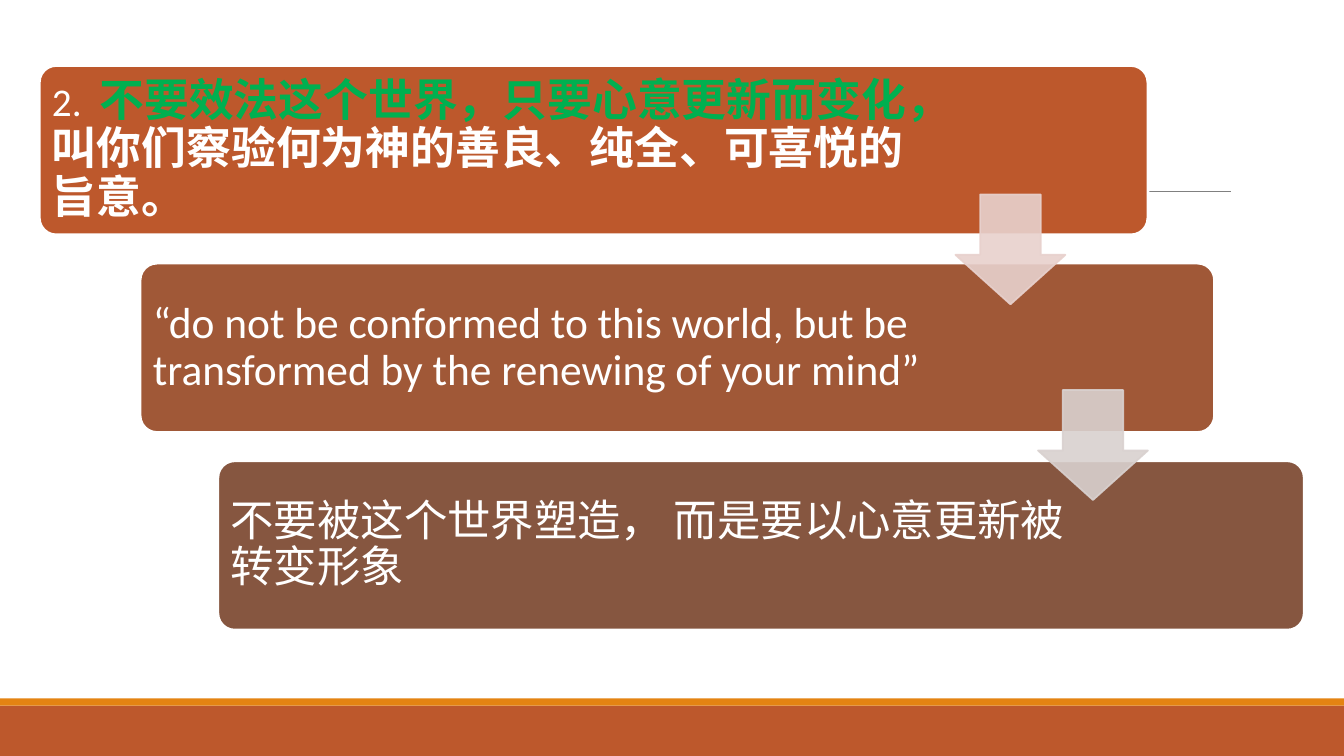
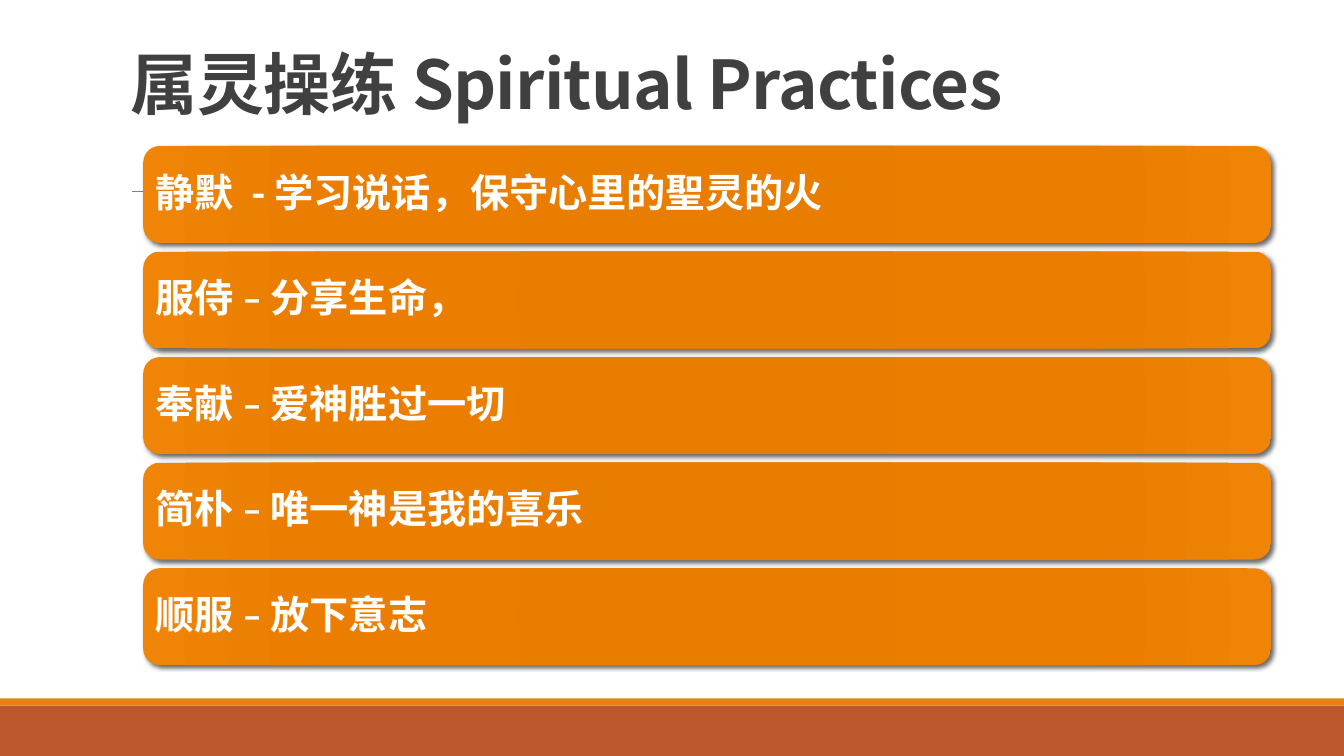
"""Build two slides: a cascade of verse cards and a list of spiritual practices."""
from lxml import etree
from pptx import Presentation
from pptx import util as u
from pptx.dml.color import RGBColor
from pptx.enum import shapes, text
from pptx.oxml import ns

SLIDE_WIDTH, SLIDE_HEIGHT = 33.87, 19.05
RUST, AMBER, WHITE, GREEN = "BD582C", "E48312", "FFFFFF", "00B050"
GREY, CHARCOAL, BLACK = "808080", "404040", "000000"
LATIN, CHINESE = "Calibri", "Noto Sans CJK SC"
GRADIENT = [(0, "E57B00"), (34, "E87D00"), (70, "EB7E00"), (100, "EF8407")]

TITLE = {"size": u.Pt(48), "name": CHINESE, "bold": True, "color": CHARCOAL}
NUMBER = {"size": u.Pt(28), "name": LATIN, "color": WHITE}
VERSE = {"size": u.Pt(32), "name": LATIN, "bold": True, "color": WHITE}
KEY_VERSE = {**VERSE, "name": CHINESE, "color": GREEN}
PLAIN_VERSE = {"size": u.Pt(31), "name": LATIN, "color": WHITE}
PRACTICE = {"size": u.Pt(28), "name": CHINESE, "bold": True, "color": WHITE}

CARDS = [
    (0.99, 27.94, 22.81, RUST, [
        ("2.  ", NUMBER),
        ("不要效法这个世界，只要心意更新而变化，", KEY_VERSE),
        ("叫你们察验何为神的善良、纯全、可喜悦的旨意。", VERSE)]),
    (3.53, 27.08, 21.54, "A05837", [
        ("“do not be conformed to this world, but be transformed "
         "by the renewing of your mind”", PLAIN_VERSE)]),
    (5.49, 27.38, 21.77, "865640", [
        ("不要被这个世界塑造， 而是要以心意更新被转变形象", PLAIN_VERSE)]),
]
ARROWS = [(24.08, "E8D1CD"), (26.16, "D9D1CF")]
PRACTICES = [
    "静默  - 学习说话，保守心里的聖灵的火",
    "服侍 – 分享生命，",
    "奉献 – 爱神胜过一切",
    "简朴 – 唯一神是我的喜乐",
    "顺服 – 放下意志",
]


def rgb(color):
    """Turn a hex string into a colour."""
    return RGBColor.from_string(color)


def add_child(parent, tag, **attributes):
    """Append a drawing element with the given attributes."""
    child = etree.SubElement(parent, ns.qn(tag))
    for name, value in attributes.items():
        child.set(name, str(value))
    return child


def add_color(parent, color, opacity=100):
    """Append a colour with an opacity in percent."""
    element = add_child(parent, "a:srgbClr", val=color)
    if opacity < 100:
        add_child(element, "a:alpha", val=opacity * 1000)


def set_opacity(fill, opacity):
    """Give a solid fill an opacity in percent."""
    element = fill._xPr.find(ns.qn("a:solidFill"))
    add_child(element[0], "a:alpha", val=opacity * 1000)


def write_runs(frame, runs, line_spacing, **frame_format):
    """Fill a text frame with one left-aligned paragraph of formatted runs."""
    for name, value in {"word_wrap": True, **frame_format}.items():
        setattr(frame, name, value)
    paragraph = frame.paragraphs[0]
    paragraph.alignment = text.PP_ALIGN.LEFT
    paragraph.line_spacing = line_spacing
    for words, run_format in runs:
        run = paragraph.add_run()
        run.text = words
        for name, value in run_format.items():
            if name == "color":
                run.font.color.rgb = rgb(value)
            else:
                setattr(run.font, name, value)
        add_child(run.font._element, "a:ea", typeface=LATIN)
    return paragraph


def add_block(slide, kind, box, color=None, line=None, line_width=0, adjustments=()):
    """Add a preset shape without shadow; box is left, top, width, height in cm."""
    shape = slide.shapes.add_shape(kind, *map(u.Cm, box))
    shape.shadow.inherit = False
    for index, value in enumerate(adjustments):
        shape.adjustments[index] = value
    if color:
        shape.fill.solid()
        shape.fill.fore_color.rgb = rgb(color)
    if line:
        shape.line.color.rgb = rgb(line)
        shape.line.width = u.Pt(line_width)
    else:
        shape.line.fill.background()
    return shape


def add_card(slide, box, text_width, margin, runs, corner, **block_format):
    """Add a rounded card whose text keeps to a given width."""
    left, top, width, height = box
    card = add_block(slide, shapes.MSO_SHAPE.ROUNDED_RECTANGLE, box,
                     adjustments=[corner], **block_format)
    side = margin - 0.29 * corner * height
    write_runs(card.text_frame, runs, 0.9,
               vertical_anchor=text.MSO_ANCHOR.MIDDLE,
               margin_left=u.Cm(side), margin_right=u.Cm(side + width - text_width),
               margin_top=u.Cm(side), margin_bottom=u.Cm(side))
    return card


def add_glow(card):
    """Give a card the radial orange gradient and a soft shadow."""
    properties = card._element.spPr
    gradient = etree.Element(ns.qn("a:gradFill"), rotWithShape="1")
    stops = add_child(gradient, "a:gsLst")
    for position, color in GRADIENT:
        add_color(add_child(stops, "a:gs", pos=position * 1000), color)
    circle = add_child(gradient, "a:path", path="circle")
    add_child(circle, "a:fillToRect", **dict.fromkeys("ltrb", 100000))
    properties.find(ns.qn("a:prstGeom")).addnext(gradient)
    shadow = add_child(properties.find(ns.qn("a:effectLst")), "a:outerShdw",
                       blurRad=u.Pt(3.5), dist=u.Pt(2), dir=45 * 60000,
                       algn="ctr", rotWithShape=0)
    add_color(shadow, BLACK, 60)


def add_arrow(slide, left, top, color):
    """Add a slightly transparent down arrow."""
    arrow = add_block(slide, shapes.MSO_SHAPE.DOWN_ARROW, (left, top, 2.77, 2.77),
                      color, color, 1.25, [0.55, 0.45])
    for fill in (arrow.fill, arrow.line.fill):
        set_opacity(fill, 90)


def add_base_slide(presentation):
    """Add a blank slide with the bottom bands and the thin rule."""
    slide = presentation.slides.add_slide(presentation.slide_layouts[6])
    for top, height, color in ((17.78, 1.27, RUST), (17.6, 0.18, AMBER)):
        add_block(slide, shapes.MSO_SHAPE.RECTANGLE, (0, top, SLIDE_WIDTH, height), color)
    rule = slide.shapes.add_connector(
        shapes.MSO_CONNECTOR.STRAIGHT, *map(u.Cm, (3.33, 4.83, 31.01, 4.83)))
    rule.line.color.rgb = rgb(GREY)
    rule.line.width = u.Pt(0.5)
    add_child(rule._element.spPr, "a:effectLst")
    return slide


def add_title(slide, words):
    """Add the slide title, resting on the bottom of its box."""
    box = slide.shapes.add_textbox(*map(u.Cm, (3.05, 0, 27.94, 3.23)))
    paragraph = write_runs(box.text_frame, [(words, TITLE)], 0.85,
                           vertical_anchor=text.MSO_ANCHOR.BOTTOM)
    paragraph.runs[0].font._element.set("spc", "-50")


def build_verse_slide(presentation):
    """Build the cascade of three verse cards joined by arrows."""
    slide = add_base_slide(presentation)
    for index, (left, width, text_width, color, runs) in enumerate(CARDS):
        add_card(slide, (left, 1.65 + 4.98 * index, width, 4.27), text_width, 0.32,
                 runs, 0.1, color=color, line=WHITE, line_width=2)
    for index, (left, color) in enumerate(ARROWS):
        add_arrow(slide, left, 4.9 + 4.93 * index, color)


def build_practice_slide(presentation):
    """Build the titled list of practices."""
    slide = add_base_slide(presentation)
    add_title(slide, "属灵操练 Spiritual Practices")
    for index, practice in enumerate(PRACTICES):
        box = (3.61, 3.68 + 2.66 * index, 28.42, 2.44)
        add_glow(add_card(slide, box, 28.42, 0.3, [(practice, PRACTICE)], 0.17))


def main():
    """Create and save the presentation."""
    presentation = Presentation()
    presentation.slide_width = u.Cm(SLIDE_WIDTH)
    presentation.slide_height = u.Cm(SLIDE_HEIGHT)
    build_verse_slide(presentation)
    build_practice_slide(presentation)
    presentation.save("out.pptx")


if __name__ == "__main__":
    main()
